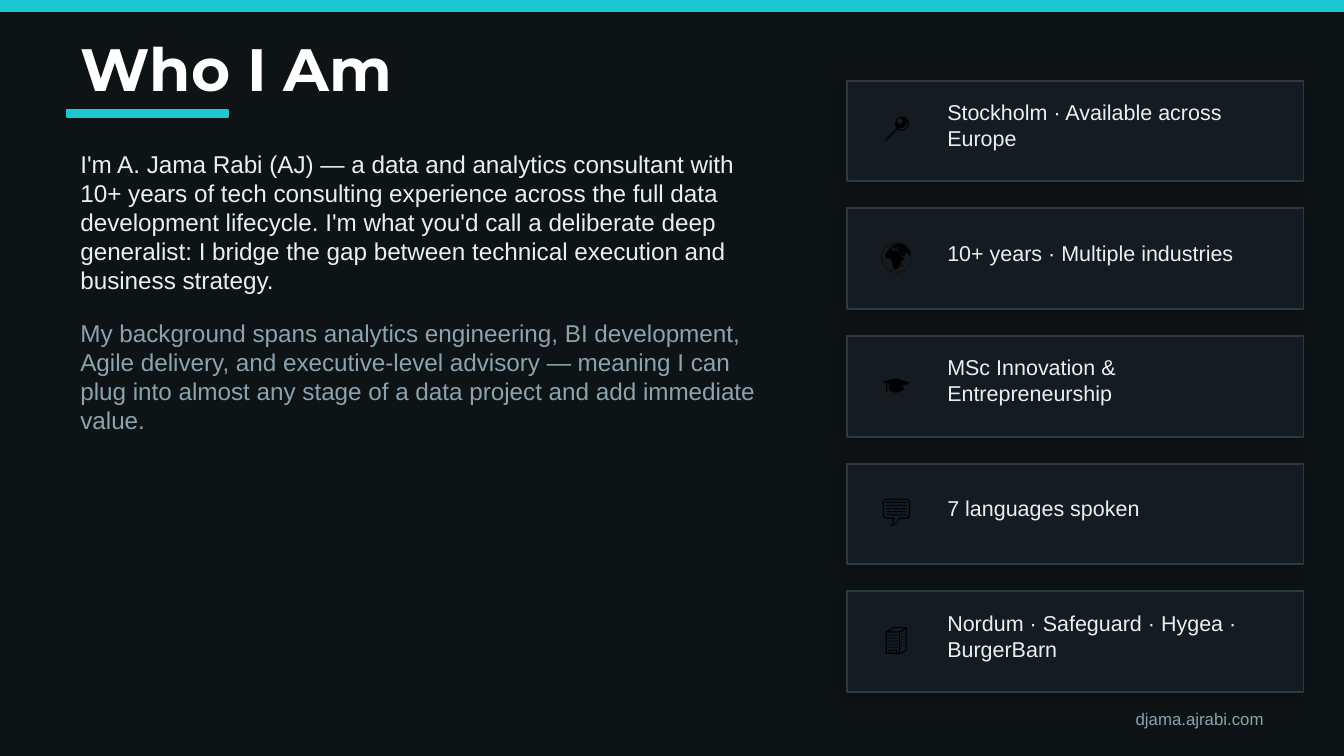
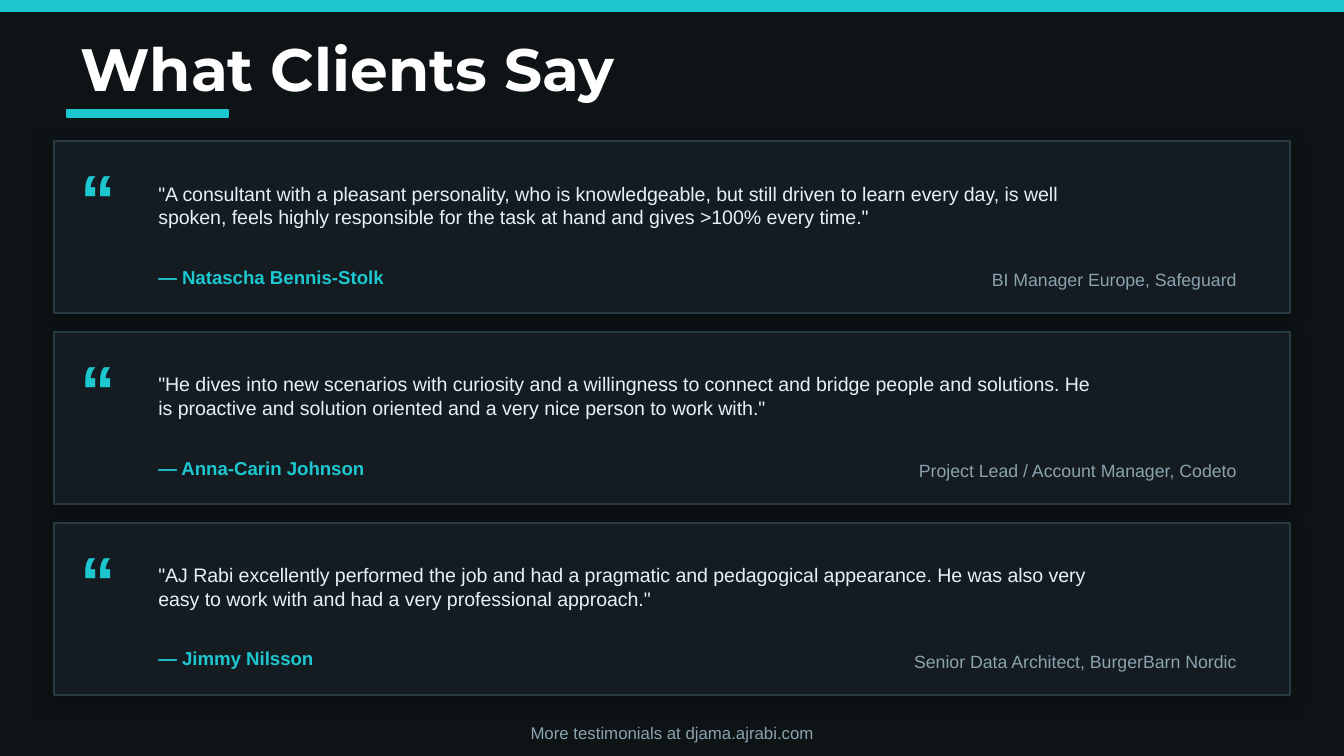
from lxml.etree import SubElement
from pptx import Presentation
from pptx.dml.color import RGBColor
from pptx.enum.shapes import MSO_SHAPE
from pptx.enum.text import MSO_ANCHOR, PP_ALIGN
from pptx.oxml.ns import qn
from pptx.util import Inches, Pt

BACKGROUND = RGBColor(0x0E, 0x13, 0x16)
ACCENT = RGBColor(0x1C, 0xC7, 0xD0)
CARD_FILL = RGBColor(0x14, 0x1C, 0x22)
CARD_LINE = RGBColor(0x2A, 0x3A, 0x42)
WHITE = RGBColor(0xFF, 0xFF, 0xFF)
BLACK = RGBColor(0x00, 0x00, 0x00)
LIGHT = RGBColor(0xE6, 0xF1, 0xF5)
MUTED = RGBColor(0x8B, 0xA3, 0xAF)

# Each style: colour and the font attributes to set.
STYLES = {
    "title": (WHITE, {"name": "Montserrat", "size": Pt(32), "bold": True}),
    "intro": (LIGHT, {"name": "Arial", "size": Pt(13)}),
    "background": (MUTED, {"name": "Arial", "size": Pt(13)}),
    "icon": (BLACK, {"name": "Roboto", "size": Pt(16)}),
    "fact": (LIGHT, {"name": "Arial", "size": Pt(11.5)}),
    "quote mark": (ACCENT, {"name": "Arial", "size": Pt(38), "bold": True}),
    "quote": (LIGHT, {"name": "Arial", "size": Pt(10.5)}),
    "client": (ACCENT, {"name": "Arial", "size": Pt(10), "bold": True}),
    "role": (MUTED, {"name": "Arial", "size": Pt(9.5)}),
    "footer": (MUTED, {"name": "Arial", "size": Pt(9)}),
}

INTRO = (
    "I'm A. Jama Rabi (AJ) — a data and analytics consultant with 10+ years of tech "
    "consulting experience across the full data development lifecycle. I'm what you'd "
    "call a deliberate deep generalist: I bridge the gap between technical execution "
    "and business strategy."
)
CAREER = (
    "My background spans analytics engineering, BI development, Agile delivery, and "
    "executive-level advisory — meaning I can plug into almost any stage of a data "
    "project and add immediate value."
)
FACTS = [
    ("📍", "Stockholm · Available across Europe"),
    ("🌍", "10+ years · Multiple industries"),
    ("🎓", "MSc Innovation & Entrepreneurship"),
    ("💬", "7 languages spoken"),
    ("🏢", "Nordum · Safeguard · Hygea · BurgerBarn"),
]
TESTIMONIALS = [
    (
        '"A consultant with a pleasant personality, who is knowledgeable, but still '
        "driven to learn every day, is well spoken, feels highly responsible for the "
        'task at hand and gives >100% every time."',
        "Natascha Bennis-Stolk",
        "BI Manager Europe, Safeguard",
    ),
    (
        '"He dives into new scenarios with curiosity and a willingness to connect and '
        "bridge people and solutions. He is proactive and solution oriented and a very "
        'nice person to work with."',
        "Anna-Carin Johnson",
        "Project Lead / Account Manager, Codeto",
    ),
    (
        '"AJ Rabi excellently performed the job and had a pragmatic and pedagogical '
        "appearance. He was also very easy to work with and had a very professional "
        'approach."',
        "Jimmy Nilsson",
        "Senior Data Architect, BurgerBarn Nordic",
    ),
]

FACT_TOP, FACT_PITCH = 0.6, 0.95
TESTIMONIAL_TOP, TESTIMONIAL_PITCH = 1.05, 1.42


def add_text(slide, text, style, left, top, width, height,
             align=PP_ALIGN.LEFT, anchor=MSO_ANCHOR.MIDDLE):
    frame = slide.shapes.add_textbox(
        Inches(left), Inches(top), Inches(width), Inches(height)).text_frame
    frame.word_wrap = True
    frame.vertical_anchor = anchor
    paragraph = frame.paragraphs[0]
    paragraph.alignment = align
    run = paragraph.add_run()
    run.text = text
    color, font_values = STYLES[style]
    for attribute, value in font_values.items():
        setattr(run.font, attribute, value)
    run.font.color.rgb = color


def add_box(slide, left, top, width, height, fill=ACCENT, line=ACCENT):
    box = slide.shapes.add_shape(
        MSO_SHAPE.RECTANGLE, Inches(left), Inches(top), Inches(width), Inches(height))
    box.fill.solid()
    box.fill.fore_color.rgb = fill
    box.line.color.rgb = line
    box.line.width = Pt(1)
    box.shadow.inherit = False
    return box


def add_card(slide, left, top, width, height):
    """Add a dark panel with a soft shadow down to the left."""
    card = add_box(slide, left, top, width, height, CARD_FILL, CARD_LINE)
    effects = card._element.spPr.find(qn("a:effectLst"))
    shadow = SubElement(effects, qn("a:outerShdw"), blurRad=str(Pt(10)),
                        dist=str(Pt(3)), dir=str(135 * 60000),
                        algn="bl", rotWithShape="0")
    color = SubElement(shadow, qn("a:srgbClr"), val=str(BLACK))
    SubElement(color, qn("a:alpha"), val="30000")


def add_titled_slide(deck, title):
    slide = deck.slides.add_slide(deck.slide_layouts[6])
    slide.background.fill.solid()
    slide.background.fill.fore_color.rgb = BACKGROUND
    add_box(slide, 0, 0, 10, 0.08)
    add_text(slide, title, "title", 0.5, 0.2, 9, 0.6)
    add_box(slide, 0.5, 0.82, 1.2, 0.05)
    return slide


def add_fact(slide, top, icon, fact):
    add_card(slide, 6.3, top, 3.4, 0.75)
    add_text(slide, icon, "icon", 6.42, top + 0.02, 0.5, 0.65, PP_ALIGN.CENTER)
    add_text(slide, fact, "fact", 6.95, top + 0.08, 2.7, 0.5)


def add_testimonial(slide, top, quote, client, role):
    add_card(slide, 0.4, top, 9.2, 1.28)
    add_text(slide, "“", "quote mark", 0.5, top + 0.05, 0.55, 0.65,
             anchor=MSO_ANCHOR.TOP)
    add_text(slide, quote, "quote", 1.08, top + 0.1, 7.2, 0.75)
    add_text(slide, f"— {client}", "client", 1.08, top + 0.88, 4.5, 0.26)
    add_text(slide, role, "role", 5.6, top + 0.9, 3.7, 0.26, PP_ALIGN.RIGHT)


def build_profile(deck):
    slide = add_titled_slide(deck, "Who I Am")
    add_text(slide, INTRO, "intro", 0.5, 1, 5.4, 1.3)
    add_text(slide, CAREER, "background", 0.5, 2.3, 5.4, 1)
    for row, (icon, fact) in enumerate(FACTS):
        add_fact(slide, FACT_TOP + row * FACT_PITCH, icon, fact)
    add_text(slide, "djama.ajrabi.com", "footer", 0.5, 5.2, 9, 0.3, PP_ALIGN.RIGHT)


def build_testimonials(deck):
    slide = add_titled_slide(deck, "What Clients Say")
    for row, testimonial in enumerate(TESTIMONIALS):
        add_testimonial(slide, TESTIMONIAL_TOP + row * TESTIMONIAL_PITCH, *testimonial)
    add_text(slide, "More testimonials at djama.ajrabi.com", "footer",
             0.5, 5.35, 9, 0.2, PP_ALIGN.CENTER)


def main():
    deck = Presentation()
    deck.slide_width = Inches(10)
    deck.slide_height = Inches(10) * 9 // 16
    build_profile(deck)
    build_testimonials(deck)
    deck.save("out.pptx")


if __name__ == "__main__":
    main()
